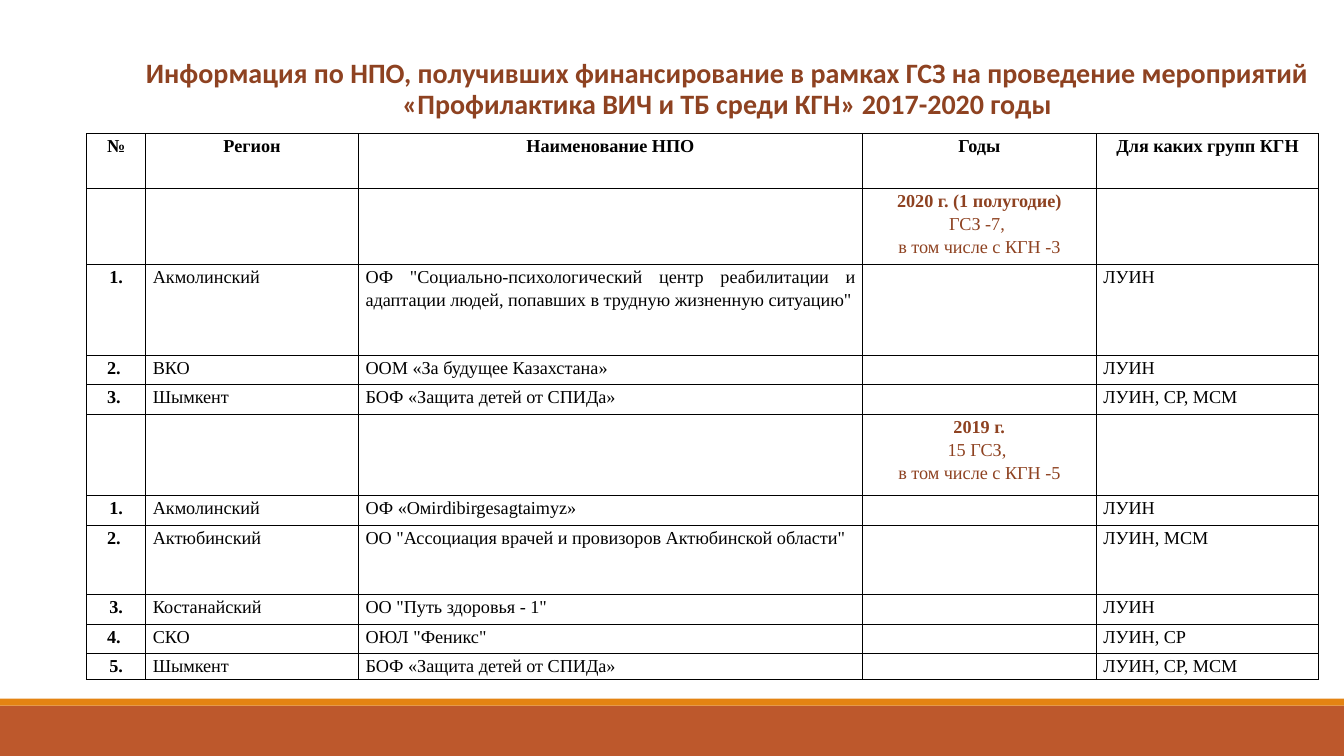
from dataclasses import dataclass

from lxml.etree import SubElement
from pptx import Presentation
from pptx.dml.color import RGBColor as RGB
from pptx.enum.shapes import MSO_SHAPE as Shape
from pptx.enum.text import PP_ALIGN as Align
from pptx.oxml.ns import qn
from pptx.util import Pt


@dataclass(frozen=True)
class Theme:
    black: str = "000000"
    brown: str = "8E4221"
    rust: str = "BD582C"
    orange: str = "E48312"
    title_font: str = "Calibri"
    table_font: str = "Times New Roman"
    title_size: int = 20
    table_size: int = 13
    border: int = 1


class SlideBuilder:
    def __init__(self, slide, theme):
        self.slide = slide
        self.theme = theme

    def bar(self, left, top, width, height, color):
        bar = self.slide.shapes.add_shape(
            Shape.RECTANGLE, Pt(left), Pt(top), Pt(width), Pt(height))
        bar.shadow.inherit = False
        bar.fill.solid()
        bar.fill.fore_color.rgb = RGB.from_string(color)
        bar.line.fill.background()

    def style(self, paragraph, font, size, color, bold, align, spacing):
        paragraph.alignment = align
        paragraph.line_spacing = spacing
        for run in paragraph.runs:
            run.font.name = font
            run.font.size = Pt(size)
            run.font.bold = bold
            run.font.color.rgb = RGB.from_string(color)

    def title(self, left, top, width, height, text):
        frame = self.slide.shapes.add_textbox(
            Pt(left), Pt(top), Pt(width), Pt(height)).text_frame
        frame.word_wrap = True
        frame.margin_left = frame.margin_right = 0
        frame.margin_top = frame.margin_bottom = Pt(3.6)
        frame.text = text
        heading = frame.paragraphs[0]
        heading.space_before, heading.space_after = Pt(12), Pt(2)
        self.style(heading, self.theme.title_font, self.theme.title_size,
                   self.theme.brown, True, Align.CENTER, 0.9)

    def cell(self, cell, text, color, align, bold_lines):
        cell.margin_left = cell.margin_right = Pt(5.2)
        cell.margin_top = cell.margin_bottom = 0
        properties = cell._tc.get_or_add_tcPr()
        for side in ("a:lnL", "a:lnR", "a:lnT", "a:lnB"):
            line = SubElement(properties, qn(side), w=str(Pt(self.theme.border)))
            fill = SubElement(line, qn("a:solidFill"))
            SubElement(fill, qn("a:srgbClr"), val=self.theme.black)
        cell.fill.background()
        cell.text_frame.text = text
        for number, paragraph in enumerate(cell.text_frame.paragraphs):
            self.style(paragraph, self.theme.table_font, self.theme.table_size,
                       color, number < bold_lines, align, 1.15)
            # Empty cells need the small size too, or their rows grow
            if not text:
                SubElement(paragraph._p, qn("a:endParaRPr"),
                           sz=str(self.theme.table_size * 100))

    def table(self, left, top, widths, heights, rows):
        table = self.slide.shapes.add_table(
            len(rows), len(widths), Pt(left), Pt(top),
            Pt(sum(widths)), Pt(sum(heights))).table
        table.first_row = table.horz_banding = False
        for column, width in zip(table.columns, widths):
            column.width = Pt(width)
        for r, (height, texts) in enumerate(zip(heights, rows)):
            table.rows[r].height = Pt(height)
            is_year = r > 0 and not texts[0]
            for c, text in enumerate(texts):
                centred = r == 0 or c == 0 or is_year
                self.cell(table.cell(r, c), text,
                          self.theme.brown if is_year else self.theme.black,
                          Align.CENTER if centred else Align.JUSTIFY,
                          1 if centred else 0)


def year_row(summary):
    return ("", "", "", summary, "")


def grant_row(number, region, organisation, groups):
    return (number, region, organisation, "", groups)


GRANTS = [
    ("№", "Регион", "Наименование НПО", "Годы", "Для каких групп КГН"),
    year_row("2020 г. (1 полугодие)\nГСЗ -7, \nв том числе с КГН -3"),
    grant_row("1.", "Акмолинский",
              'ОФ "Социально-психологический центр реабилитации и адаптации '
              'людей, попавших в трудную жизненную ситуацию"', "ЛУИН"),
    grant_row("2. ", "ВКО", "ООМ «За будущее Казахстана»", "ЛУИН"),
    grant_row("3. ", "Шымкент", "БОФ «Защита детей от СПИДа»", "ЛУИН, СР, МСМ"),
    year_row("2019 г.\n15 ГСЗ, \nв том числе с КГН -5"),
    grant_row("1.", "Акмолинский", "ОФ «Оміrdіbirgesagtaimyz»", "ЛУИН"),
    grant_row("2. ", "Актюбинский",
              'ОО "Ассоциация врачей и провизоров Актюбинской области"',
              "ЛУИН, МСМ"),
    grant_row("3.", "Костанайский", 'ОО "Путь здоровья - 1"', "ЛУИН"),
    grant_row("4. ", "СКО", 'ОЮЛ "Феникс"', "ЛУИН, СР"),
    grant_row("5.", "Шымкент", "БОФ «Защита детей от СПИДа»", "ЛУИН, СР, МСМ"),
]
COLUMN_WIDTHS = [42, 152, 360, 167, 159]
ROW_HEIGHTS = [39, 54.7, 64.8, 21, 21, 58.3, 21, 49.7, 21, 21, 18.7]


def main():
    deck = Presentation()
    deck.slide_width, deck.slide_height = Pt(960), Pt(540)
    theme = Theme()
    builder = SlideBuilder(deck.slides.add_slide(deck.slide_layouts[6]), theme)

    # Footer bars
    builder.bar(0, 504, 960, 36, theme.rust)
    builder.bar(0, 499, 960, 5, theme.orange)

    # Heading
    builder.title(79, 39, 881, 423,
                  "Информация по НПО, получивших финансирование в рамках ГСЗ "
                  "на проведение мероприятий «Профилактика ВИЧ и ТБ среди КГН» "
                  "2017-2020 годы")

    # Funded organisations by year
    builder.table(62, 95.5, COLUMN_WIDTHS, ROW_HEIGHTS, GRANTS)

    deck.save("out.pptx")


if __name__ == "__main__":
    main()
